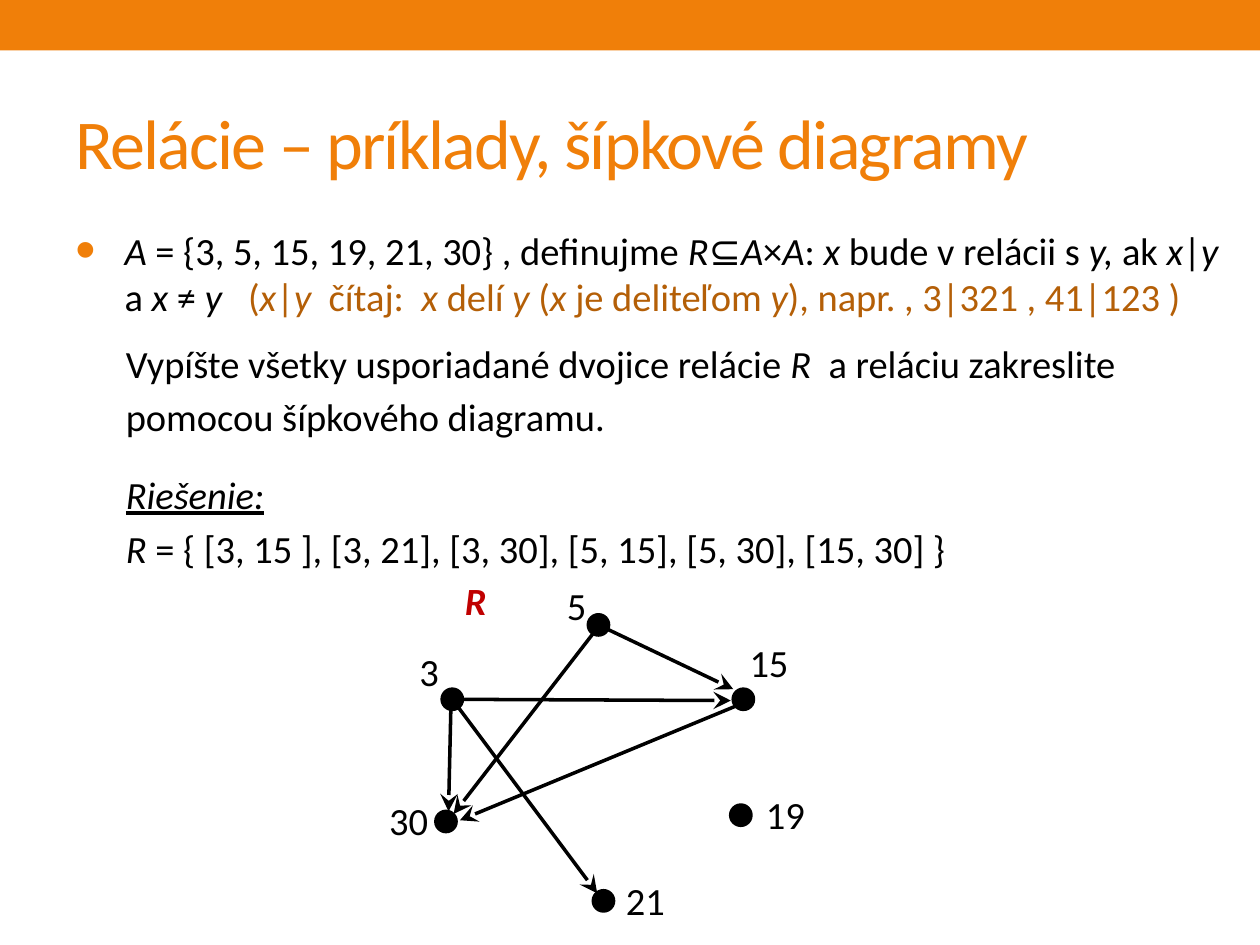
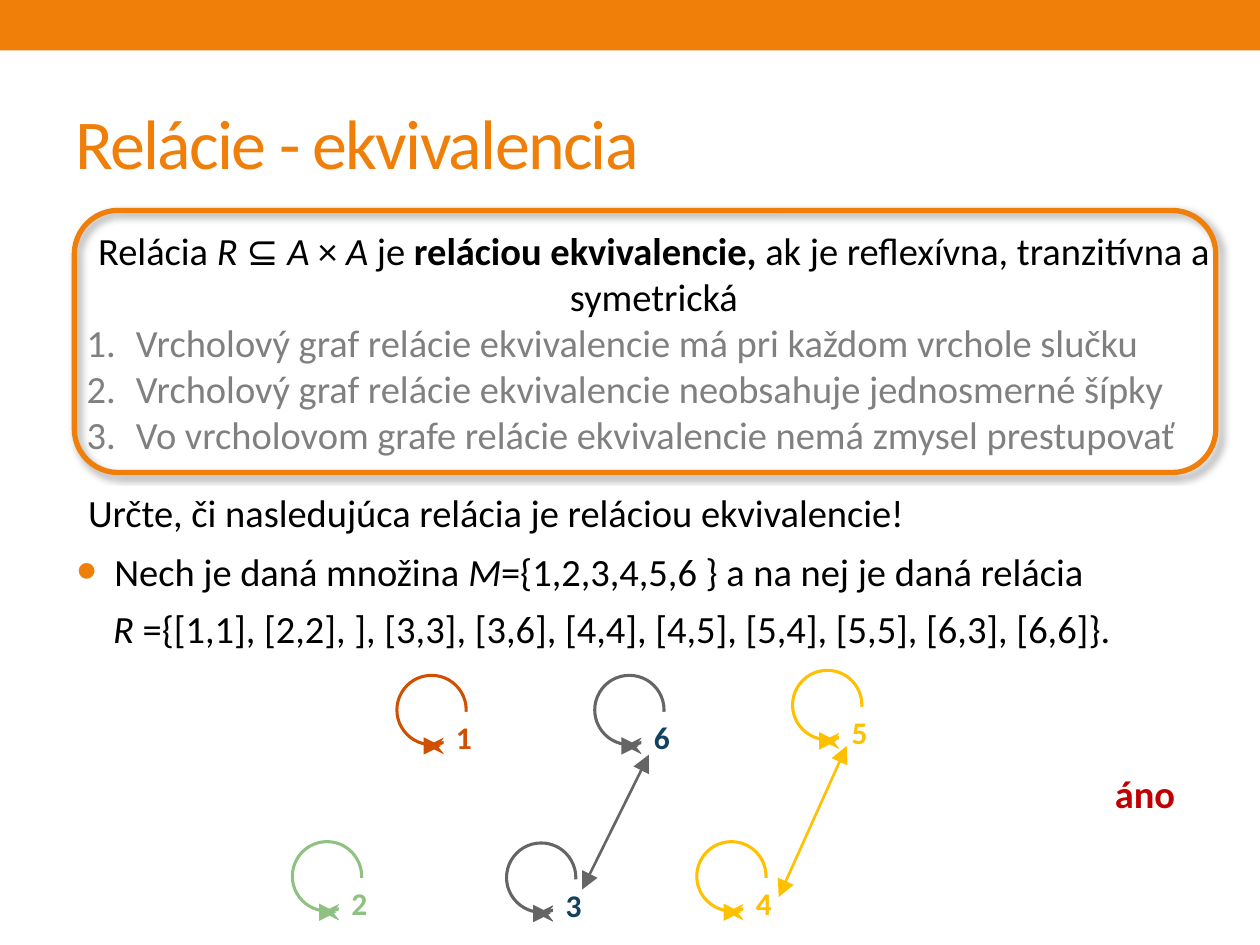
import lxml.etree
import pptx
import pptx.dml.color
import pptx.enum.shapes
import pptx.enum.text
import pptx.oxml
import pptx.oxml.ns
import pptx.util

PX = 9144  # 100 px to the inch
FONT = "Calibri"
ORANGE, BROWN, RED = "F07F09", "B45F07", "C00000"
BLACK, WHITE, GREY = "000000", "FFFFFF", "808080"
DARK_GREY, NAVY, YELLOW, GREEN, RUST = "656565", "14425D", "FFC000", "8EC182", "D05002"

rgb = pptx.dml.color.RGBColor.from_string
qn = pptx.oxml.ns.qn
shapes = pptx.enum.shapes.MSO_SHAPE


def write(slide, box, paragraphs, size=22, color=BLACK, bold=False):
    """Add a text box; paragraphs are (text, left, indent, before, bullet), * toggles italic."""
    textbox = slide.shapes.add_textbox(*(value * PX for value in box))
    frame = textbox.text_frame
    frame.word_wrap = True
    for number, (text, left, indent, before, bullet) in enumerate(paragraphs):
        paragraph = frame.add_paragraph() if number else frame.paragraphs[0]
        paragraph.space_before = pptx.util.Pt(before)
        for position, part in enumerate(text.split("*")):
            if part:
                run = paragraph.add_run()
                run.text = part
                run.font.name, run.font.size = FONT, pptx.util.Pt(size)
                run.font.bold, run.font.italic = bold, position % 2 == 1
                run.font.color.rgb = rgb(color)
        properties = paragraph._p.get_or_add_pPr()
        properties.set("marL", str(left * PX))
        properties.set("indent", str(indent * PX))
        if bullet:
            bullet_color = lxml.etree.SubElement(properties, qn("a:buClr"))
            is_dot = bullet == "•"
            lxml.etree.SubElement(bullet_color, qn("a:srgbClr"), val=ORANGE if is_dot else GREY)
            if is_dot:
                lxml.etree.SubElement(properties, qn("a:buSzPct"), val="150000")
                lxml.etree.SubElement(properties, qn("a:buFont"), typeface="Arial")
                lxml.etree.SubElement(properties, qn("a:buChar"), char=bullet)
            else:
                lxml.etree.SubElement(properties, qn("a:buAutoNum"), type="arabicPeriod")
    return textbox


def add_arrow(slide, ends, color, width, head, tail):
    """Add a straight line with large arrowheads at its ends."""
    connector = slide.shapes.add_connector(
        pptx.enum.shapes.MSO_CONNECTOR.STRAIGHT, *(value * PX for value in ends))
    connector.line.color.rgb = rgb(color)
    connector.line.width = pptx.util.Pt(width)
    line = connector.line._get_or_add_ln()
    for tag, kind in (("a:headEnd", head), ("a:tailEnd", tail)):
        lxml.etree.SubElement(line, qn(tag), type=kind, w="lg", len="lg")
    lxml.etree.SubElement(connector._element.spPr, qn("a:effectLst"))


presentation = pptx.Presentation()
presentation.slide_width, presentation.slide_height = 1000 * PX, 750 * PX

# Band and title of both slides
slides = []
for title_text in ("Relácie – príklady, šípkové diagramy", "Relácie - ekvivalencia"):
    slide = presentation.slides.add_slide(presentation.slide_layouts[5])
    slides.append(slide)
    band = slide.shapes.add_shape(shapes.RECTANGLE, 0, 0, 1000 * PX, 40 * PX)
    band.shadow.inherit = False
    band.fill.solid()
    band.fill.fore_color.rgb = rgb(ORANGE)
    band.line.fill.background()
    title = slide.shapes.title
    title.left, title.top, title.width, title.height = 50 * PX, 58 * PX, 900 * PX, 108 * PX
    title.text_frame.text = title_text
    title.text_frame.vertical_anchor = pptx.enum.text.MSO_ANCHOR.MIDDLE
    paragraph = title.text_frame.paragraphs[0]
    paragraph.alignment = pptx.enum.text.PP_ALIGN.LEFT
    font = paragraph.runs[0].font
    font.name, font.size = FONT, pptx.util.Pt(40)
    font.color.rgb = rgb(ORANGE)
    paragraph.runs[0]._r.get_or_add_rPr().set("spc", "-100")
diagram_slide, equivalence_slide = slides

# Slide 1: task and solution
task = write(diagram_slide, (50, 175, 938, 283), [
    ("*A* = {3, 5, 15, 19, 21, 30} , definujme *R*⊆*A*×*A*: *x *bude v relácii s *y, *ak "
     "*x*|*y *a *x *≠ *y   *(*x*|*y  *čítaj:  *x *delí* y *(*x *je deliteľom *y*), "
     "napr. , 3|321 , 41|123 )", 39, -39, 4.4, "•"),
    ("Vypíšte všetky usporiadané dvojice relácie *R * a reláciu zakreslite pomocou "
     "šípkového diagramu.", 40, 0, 8, None),
    ("*Riešenie:*", 40, 0, 18, None),
    ("*R* = { [3, 15 ], [3, 21], [3, 30], [5, 15], [5, 30], [15, 30] }", 40, 0, 4.4, None),
])
task_paragraphs = task.text_frame.paragraphs
for run in task_paragraphs[0].runs[19:]:
    run.font.color.rgb = rgb(BROWN)
task_paragraphs[1].line_spacing = 1.15
task_paragraphs[2].runs[0].font.underline = True

# Slide 1: vertices, each with dot corner and label box
vertices = {
    "3": (351, 547, 323, 509, 39),
    "5": (467, 488, 440, 457, 39),
    "15": (582, 547, 585, 502, 59),
    "19": (580, 639, 598, 623, 59),
    "21": (471, 707, 487, 691, 66),
    "30": (346, 644, 299, 628, 66),
}
for name, (dot_x, dot_y, label_x, label_y, label_width) in vertices.items():
    dot = diagram_slide.shapes.add_shape(
        shapes.OVAL, dot_x * PX, dot_y * PX, 16 * PX, 16 * PX)
    dot.shadow.inherit = False
    dot.fill.solid()
    dot.fill.fore_color.rgb = dot.line.color.rgb = rgb(BLACK)
    dot.line.width = pptx.util.Pt(2.08)
    write(diagram_slide, (label_x, label_y, label_width, 47), [(name, 0, 0, 0, None)])
write(diagram_slide, (359, 453, 41, 47), [("*R*", 0, 0, 0, None)], color=RED, bold=True)

# Slide 1: arrows of the relation
for ends in (
    (358, 555, 356, 644),
    (476, 496, 360, 646),
    (359, 555, 580, 556),
    (597, 555, 365, 651),
    (359, 555, 474, 709),
    (475, 496, 582, 547),
):
    add_arrow(diagram_slide, ends, BLACK, 2, "none", "stealth")

# Slide 2: definition and question
definition = write(equivalence_slide, (50, 175, 938, 271), [
    ("Relácia *R *⊆ *A *× *A* je **reláciou ekvivalencie, **ak je reflexívna, "
     "tranzitívna a symetrická", 0, 0, 4.4, None),
    ("Vrcholový graf relácie ekvivalencie má pri každom vrchole slučku", 48, -39, 0, "1."),
    ("Vrcholový graf relácie ekvivalencie neobsahuje jednosmerné šípky", 48, -39, 0, "1."),
    ("Vo vrcholovom grafe relácie ekvivalencie nemá zmysel prestupovať", 48, -39, 0, "1."),
    ("Určte, či nasledujúca relácia je reláciou ekvivalencie!", 10, 0, 18, None),
])
definition_paragraphs = definition.text_frame.paragraphs
definition_paragraphs[0].alignment = pptx.enum.text.PP_ALIGN.CENTER
definition_paragraphs[0].runs[7].font.bold = True
for paragraph in definition_paragraphs[1:4]:
    paragraph.runs[0].font.color.rgb = rgb(GREY)

# Slide 2: frame with a soft shadow
frame_box = equivalence_slide.shapes.add_shape(
    shapes.ROUNDED_RECTANGLE, 59 * PX, 167 * PX, 906 * PX, 208 * PX)
frame_box.shadow.inherit = False
frame_box.fill.background()
frame_box.line.color.rgb = rgb(ORANGE)
frame_box.line.width = pptx.util.Pt(3)
effects = frame_box._element.spPr.find(qn("a:effectLst"))
shadow = lxml.etree.SubElement(
    effects, qn("a:outerShdw"), blurRad="50800", dist="38100", dir="2700000",
    algn="tl", rotWithShape="0")
shadow_color = lxml.etree.SubElement(shadow, qn("a:srgbClr"), val=BLACK)
lxml.etree.SubElement(shadow_color, qn("a:alpha"), val="40000")

# Slide 2: the given relation and the answer
write(equivalence_slide, (51, 430, 937, 93), [
    ("Nech je daná množina *M*={1,2,3,4,5,6 } a na nej je daná relácia", 30, -30, 6, "•"),
    ("*R* ={[1,1], [2,2], ], [3,3], [3,6], [4,4], [4,5], [5,4], [5,5], [6,3], [6,6]}.",
     29, 0, 6, None),
])
write(equivalence_slide, (875, 606, 90, 47), [("áno", 0, 0, 6, None)], color=RED, bold=True)

# Slide 2: vertices with loops; the label box covers a quarter of each loop
for name, x, y, loop_color, label_color in (
    ("1", 315, 536, RUST, RUST),
    ("2", 232, 668, GREEN, GREEN),
    ("3", 402, 669, DARK_GREY, NAVY),
    ("4", 553, 668, YELLOW, YELLOW),
    ("5", 629, 532, YELLOW, YELLOW),
    ("6", 472, 536, DARK_GREY, NAVY),
):
    loop = equivalence_slide.shapes.add_shape(shapes.OVAL, x * PX, y * PX, 55 * PX, 55 * PX)
    loop.shadow.inherit = False
    loop.fill.background()
    loop.line.color.rgb = rgb(loop_color)
    loop.line.width = pptx.util.Pt(1.75)
    add_arrow(equivalence_slide, (x + 24, y + 56, x + 35, y + 56),
              loop_color, 1.5, "stealth", "triangle")
    label = write(equivalence_slide, (x + 37, y + 29, 39, 40), [(name, 0, 0, 0, None)],
                  size=18, color=label_color, bold=True)
    label.fill.solid()
    label.fill.fore_color.rgb = rgb(WHITE)

# Slide 2: two-way arrows 3–6 and 4–5
for ends, color in (((462, 706, 515, 599), DARK_GREY), ((618, 712, 672, 592), YELLOW)):
    add_arrow(equivalence_slide, ends, color, 1.5, "triangle", "triangle")

presentation.save("out.pptx")
